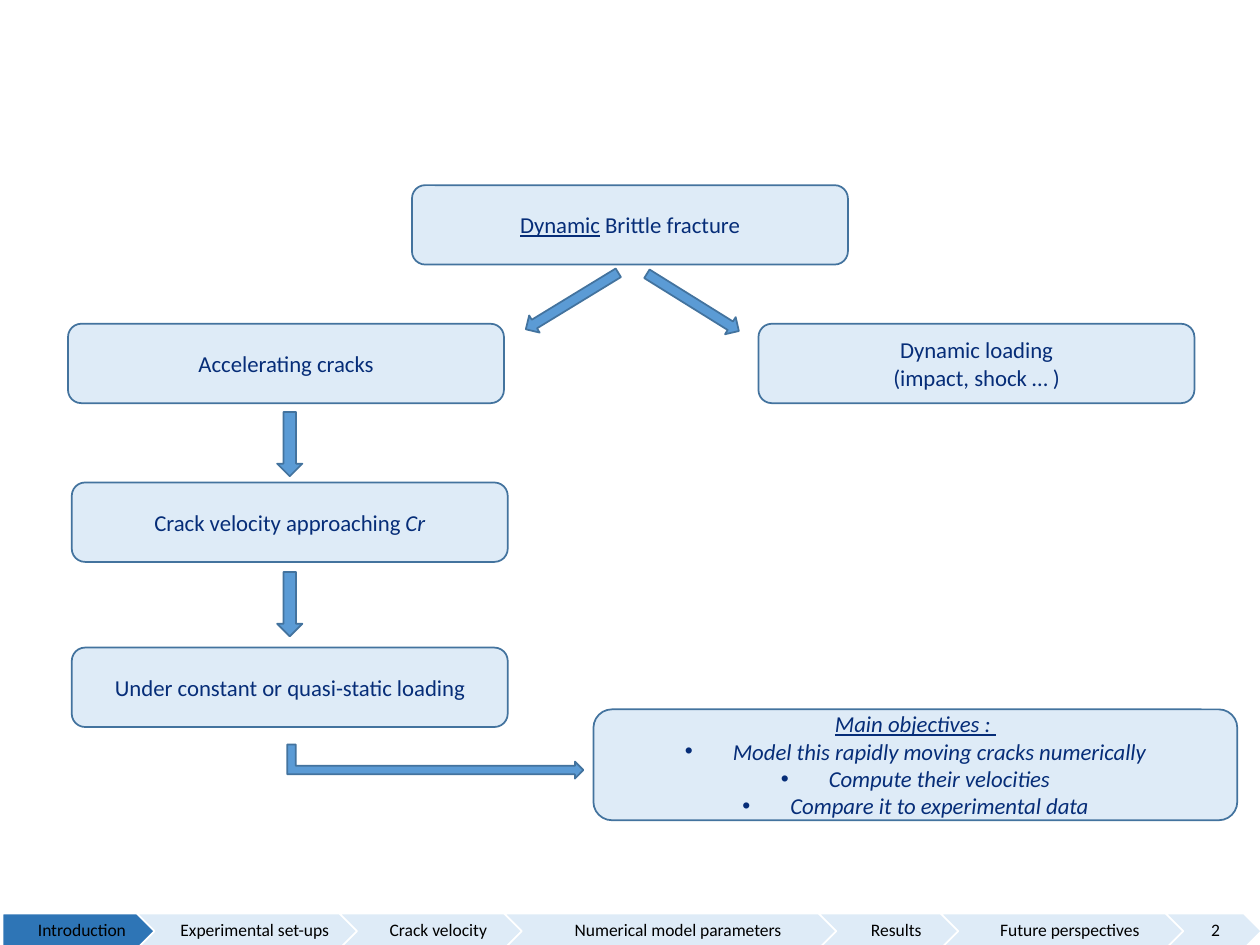
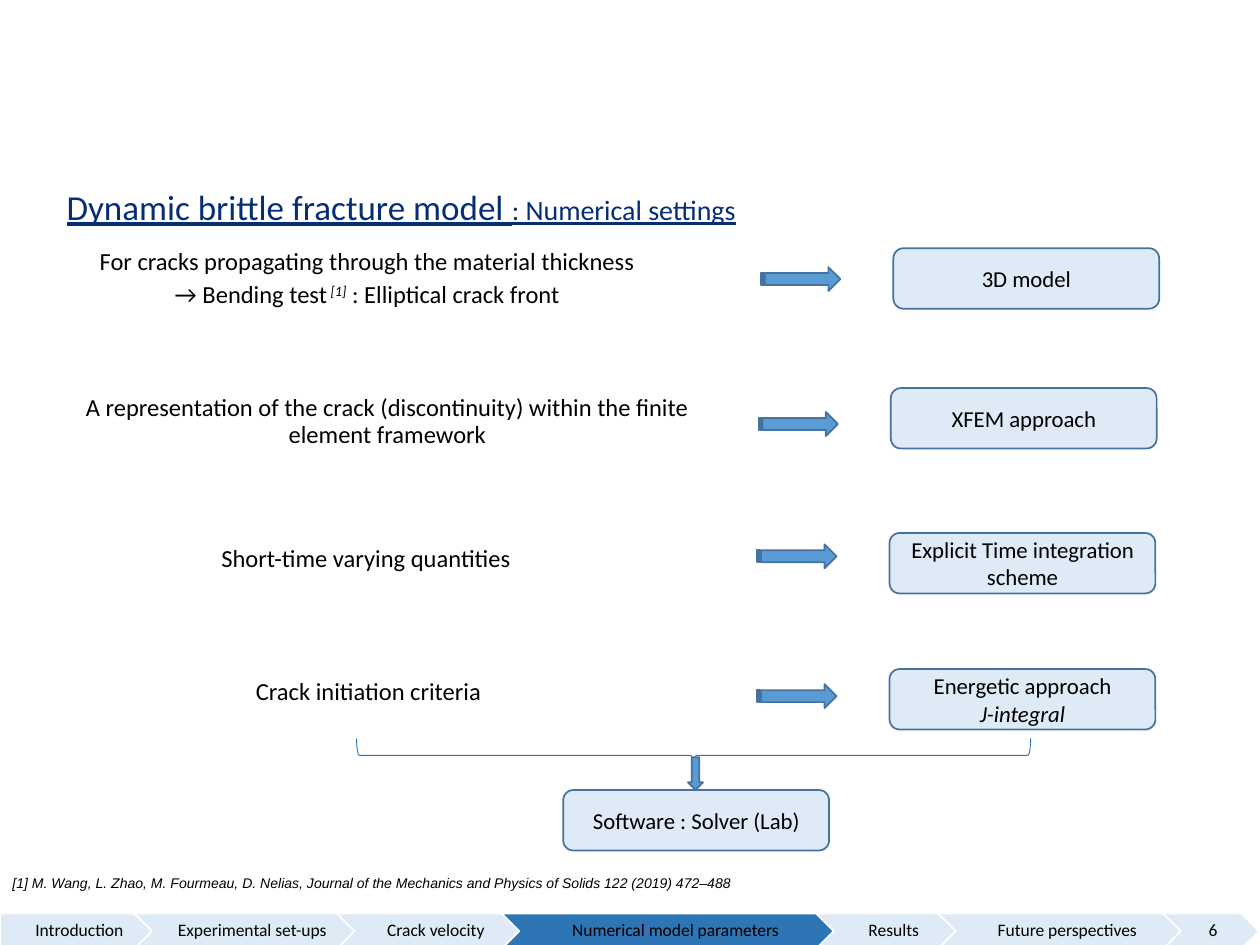
from dataclasses import dataclass
from pptx import Presentation
from pptx.dml.color import RGBColor as RGB
from pptx.enum.shapes import MSO_SHAPE as Kind
from pptx.enum.text import MSO_ANCHOR as Anchor, PP_ALIGN as Align
from pptx.oxml.ns import qn
from pptx.util import Inches, Pt
from lxml import etree


@dataclass(frozen=True)
class Theme:
    navy: str = "062D78"
    black: str = "000000"
    white: str = "FFFFFF"
    pale: str = "DEEBF7"
    blue: str = "5B9BD5"
    deep: str = "2E75B6"
    edge: str = "43739E"
    font: str = "Calibri"
    cite: str = "Arial"
    title: int = 20
    sub: int = 16
    body: int = 14
    label: int = 13
    nav: int = 10
    note: int = 8


theme = Theme()
deck = Presentation()
deck.slide_width, deck.slide_height = Inches(10), Inches(7.5)
COL = deck.slide_width / 100   # grid of 100 columns
ROW = deck.slide_height / 75   # and 75 rows
INDENT = int(3.8 * COL)


def draw(slide, kind, x, y, w, h, fill=None, line=theme.edge, wide=1, turn=0):
    """Place a shape by grid columns and rows; no kind gives a text box."""
    area = [int(x * COL), int(y * ROW), int(w * COL), int(h * ROW)]
    if kind is None:
        item = slide.shapes.add_textbox(*area)
        item.text_frame.word_wrap = True
        return item
    item = slide.shapes.add_shape(kind, *area)
    item.shadow.inherit = False
    item.rotation = turn
    if fill:
        item.fill.solid()
        item.fill.fore_color.rgb = RGB.from_string(fill)
    else:
        item.fill.background()
    item.line.color.rgb = RGB.from_string(line)
    item.line.width = Pt(wide)
    return item


def write(item, paras, size, color=theme.black, font=theme.font,
          align=Align.CENTER, space=None, margin=0, bullets=False):
    """Fill with paragraphs; each is a list of (text, marks, size) runs.
    Marks: i italic, u underline, ^ superscript."""
    frame = item.text_frame
    for n, runs in enumerate(paras):
        para = frame.add_paragraph() if n else frame.paragraphs[0]
        para.alignment = align
        if space:
            para.line_spacing = space
            if n:
                para.space_before = Pt(3.8)
        props = para._p.get_or_add_pPr()
        if margin:
            props.set("marL", str(margin))
        if bullets and n:
            props.set("marL", str(INDENT))
            props.set("indent", str(-INDENT))
            etree.SubElement(props, qn("a:buFont")).set("typeface", "Arial")
            etree.SubElement(props, qn("a:buChar")).set("char", "•")
        para.font.size, para.font.name = Pt(size), font
        para.font.color.rgb = RGB.from_string(color)
        for text, marks, *own in runs:
            run = para.add_run()
            run.text = text
            if "i" in marks:
                run.font.italic = True
            if "u" in marks:
                run.font.underline = True
            if "^" in marks:
                run._r.get_or_add_rPr().set("baseline", "30000")
            if own:
                run.font.size = Pt(own[0])


# Slides with the shared progress band
steps = [("Introduction", 13), ("Experimental set-ups", 18.4),
         ("Crack velocity", 15.4), ("Numerical model parameters", 27.3),
         ("Results", 12), ("Future perspectives", 20.2)]
pages = []
for number, active, left in [("2", 0, 0.2), ("6", 3, 0)]:
    page = deck.slides.add_slide(deck.slide_layouts[6])
    pages.append(page)
    for n, (name, wide) in enumerate(steps + [(number, 7.6)]):
        step = draw(page, Kind.CHEVRON if n else Kind.PENTAGON,
                    left, 72.5, wide, 2.8,
                    theme.deep if n == active else theme.pale, theme.white)
        frame = step.text_frame
        frame.margin_left, frame.margin_right = Inches(0.04), Inches(0.01)
        frame.margin_top = frame.margin_bottom = Inches(0.03)
        write(step, [[(name, "")]], theme.nav, space=0.9)
        left += wide - 2.33
flow, model = pages

# Flow slide: boxes
topics = [
    (32.7, 14.7, [[("Dynamic", "u"), (" Brittle fracture", "")]]),
    (5.4, 25.7, [[("Accelerating cracks", "")]]),
    (60.2, 25.7, [[("Dynamic loading", "")], [("(impact, shock … )", "")]]),
    (5.7, 38.3, [[("Crack velocity approaching ", ""), ("Cr", "i")]]),
    (5.7, 51.4, [[("Under constant or quasi-static loading", "")]]),
]
for x, y, paras in topics:
    topic = draw(flow, Kind.ROUNDED_RECTANGLE, x, y, 34.6, 6.3, theme.pale)
    write(topic, paras, theme.label, theme.navy)

goals = ["Model this rapidly moving cracks numerically",
         "Compute their velocities", "Compare it to experimental data"]
goal = draw(flow, Kind.ROUNDED_RECTANGLE, 47.1, 56.3, 51.1, 8.8, theme.pale)
write(goal, [[("Main objectives : ", "iu")]] + [[(g, "i")] for g in goals],
      theme.label, theme.navy, bullets=True)

# Flow slide: arrows
for kind, x, y, w, h, turn in [
        (Kind.DOWN_ARROW, 22, 32.7, 2, 5.1, 0),
        (Kind.DOWN_ARROW, 22, 45.4, 2, 5.1, 0),
        (Kind.DOWN_ARROW, 44.6, 19.6, 1.6, 8.6, 58.6),
        (Kind.DOWN_ARROW, 54.2, 19.7, 1.6, 8.6, 301.9),
        (Kind.BENT_UP_ARROW, 33.2, 48.7, 2.7, 23.5, 90)]:
    draw(flow, kind, x, y, w, h, theme.blue, turn=turn)

# Model slide: title
title = draw(model, None, 0.5, 14.6, 82.3, 5.7)
write(title, [[("Dynamic brittle fracture model ", "u"),
               (": Numerical settings", "u", theme.sub)]],
      theme.title, theme.navy, align=Align.LEFT, space=0.9, margin=INDENT)

# Model slide: need, arrow and choice in each row
needs = [
    (0.1, 19.3, [[("For cracks propagating through the material thickness", "")],
                 [("→ Bending test", ""), (" [1]", "i^"),
                  (" : Elliptical crack front", "")]],
     60.4, 21.2, 70.9, 19.7, [[("3D model", "")]]),
    (1.7, 30.9, [[("A representation of the crack (discontinuity) within "
                   "the finite element framework", "")]],
     60.2, 32.7, 70.7, 30.8, [[("XFEM approach", "")]]),
    (0, 42.9, [[("Short-time varying quantities", "")]],
     60.1, 43.2, 70.6, 42.3, [[("Explicit Time integration scheme", "")]]),
    (0.2, 53.4, [[("Crack initiation criteria", "")]],
     60.1, 54.3, 70.6, 53.1,
     [[("Energetic approach", "")], [("J-integral", "i")]]),
]
for x, y, need, ax, ay, bx, by, choice in needs:
    write(draw(model, None, x, y, 54.3, 5), need, theme.body,
          space=0.9, margin=INDENT)
    draw(model, Kind.STRIPED_RIGHT_ARROW, ax, ay, 6.3, 1.9, theme.blue)
    write(draw(model, Kind.ROUNDED_RECTANGLE, bx, by, 21.1, 4.8, theme.pale),
          choice, theme.label)

# Model slide: brace leading to the software
draw(model, Kind.LEFT_BRACE, 53.7, 33.2, 2.7, 53.5,
     line=theme.deep, wide=0.5, turn=270)
draw(model, Kind.DOWN_ARROW, 54.6, 60.1, 1.2, 2.6, theme.blue)
tool = draw(model, Kind.ROUNDED_RECTANGLE, 44.7, 62.7, 21.1, 4.8, theme.pale)
write(tool, [[("Software : Solver (Lab)", "")]], theme.label)

# Model slide: reference
cite = draw(model, None, 0, 68.9, 97.9, 2.4)
cite.text_frame.vertical_anchor = Anchor.TOP
write(cite, [[("[1] M. Wang, L. Zhao, M. Fourmeau, D. Nelias, Journal of the "
               "Mechanics and Physics of Solids 122 (2019) 472–488", "i")]],
      theme.note, font=theme.cite, align=Align.LEFT)

deck.save("out.pptx")
